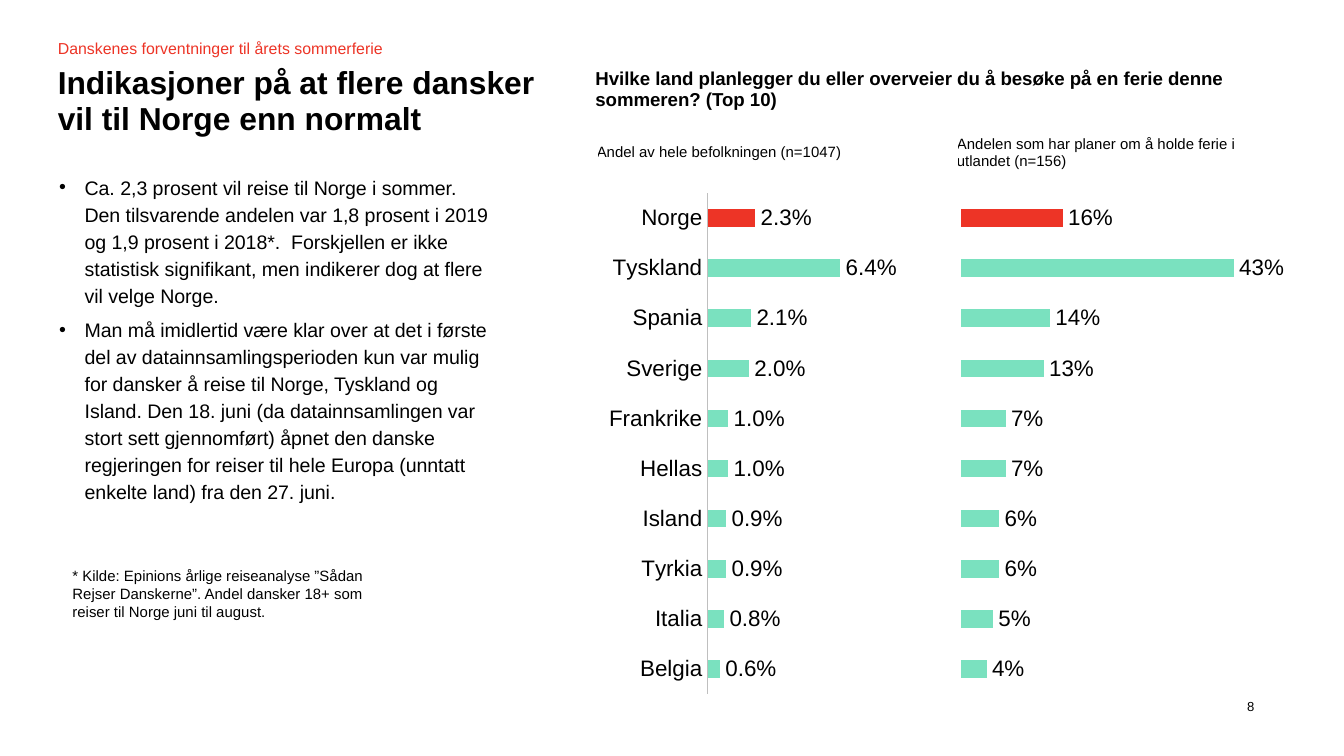
"""Build the slide on Danish summer holiday plans, with two bar charts."""
from dataclasses import dataclass

from lxml import etree
from pptx import Presentation
from pptx.chart.data import CategoryChartData
from pptx.dml.color import RGBColor
from pptx.enum.chart import XL_CHART_TYPE, XL_LABEL_POSITION, XL_TICK_LABEL_POSITION, XL_TICK_MARK
from pptx.enum.text import MSO_ANCHOR
from pptx.oxml import parse_xml
from pptx.oxml.ns import nsdecls, qn
from pptx.util import Inches, Pt

BAR = XL_CHART_TYPE.BAR_CLUSTERED
OUTSIDE_END = XL_LABEL_POSITION.OUTSIDE_END
LABELS_BESIDE = XL_TICK_LABEL_POSITION.NEXT_TO_AXIS
NO_TICK = XL_TICK_MARK.NONE
TOP = MSO_ANCHOR.TOP


@dataclass(frozen=True)
class Theme:
    """Fonts, colours and type sizes."""
    font: str = "Arial"
    ink: str = "000000"
    paper: str = "FFFFFF"
    accent: str = "ED3426"
    bar: str = "7AE1BF"
    axis: str = "BFBFBF"
    grid: str = "D9D9D9"
    number: float = 7
    small: float = 8
    kicker: float = 8.5
    heading: float = 10
    body: float = 10.5
    chart: float = 12
    title: float = 17


THEME = Theme()


@dataclass(frozen=True)
class Area:
    """A rectangle in inches."""
    left: float
    top: float
    width: float
    height: float

    def lengths(self) -> tuple:
        """Return the four sides as lengths."""
        return tuple(Inches(side) for side in (self.left, self.top, self.width, self.height))


@dataclass(frozen=True)
class Text:
    """A block of text in one style."""
    area: Area
    paragraphs: tuple[str, ...]
    size: float
    color: str = THEME.ink
    bold: bool = False
    wrap: bool = True
    bullets: bool = False
    margins: tuple[float, float] = (0, 0)
    line_spacing: float = 1
    fill: str | None = None


@dataclass(frozen=True)
class BarChart:
    """A bar chart whose first bar is highlighted."""
    area: Area
    plot: tuple[float, float, float, float]
    categories: tuple[str, ...]
    values: tuple[float, ...]
    maximum: float
    number_format: str
    show_axis: bool


COUNTRIES = ("Norge", "Tyskland", "Spania", "Sverige", "Frankrike",
             "Hellas", "Island", "Tyrkia", "Italia", "Belgia")

TEXTS = (
    Text(Area(9.28, 5.2, 0.28, 0.12), ("8",), THEME.number),
    Text(Area(0.43, 0.29, 2.45, 0.14), ("Danskenes forventninger til årets sommerferie",),
         THEME.kicker, THEME.accent, wrap=False),
    Text(Area(0.43, 0.49, 3.78, 0.54),
         ("Indikasjoner på at flere dansker vil til Norge enn normalt",),
         THEME.title, bold=True, line_spacing=0.95, fill=THEME.paper),
    Text(Area(0.44, 1.28, 3.23, 1.42), (
        "Ca. 2,3 prosent vil reise til Norge i sommer. Den tilsvarende andelen var 1,8 prosent "
        "i 2019 og 1,9 prosent i 2018*.  Forskjellen er ikke statistisk signifikant, men "
        "indikerer dog at flere vil velge Norge.",
        "Man må imidlertid være klar over at det i første del av datainnsamlingsperioden kun var "
        "mulig for dansker å reise til Norge, Tyskland og Island. Den 18. juni (da "
        "datainnsamlingen var stort sett gjennomført) åpnet den danske regjeringen for reiser "
        "til hele Europa (unntatt enkelte land) fra den 27. juni.",
    ), THEME.body, bullets=True, line_spacing=1.15),
    Text(Area(0.44, 4.17, 2.61, 0.5), (
        "* Kilde: Epinions årlige reiseanalyse ”Sådan Rejser Danskerne”. "
        "Andel dansker 18+ som reiser til Norge juni til august.",
    ), THEME.small, margins=(0.1, 0.05)),
)

HEADINGS = (
    Text(Area(4.43, 0.51, 5.15, 0.41), (
        "Hvilke land planlegger du eller overveier du å besøke på en ferie denne sommeren? "
        "(Top 10)",), THEME.heading, bold=True),
    Text(Area(7.12, 1.01, 2.31, 0.35),
         ("Andelen som har planer om å holde ferie i utlandet (n=156)",), THEME.small),
    Text(Area(4.44, 1.07, 2.31, 0.21), ("Andel av hele befolkningen (n=1047)",), THEME.small),
)

CHARTS = (
    BarChart(Area(3.76, 1.28, 3.89, 4.16), (0.387, 0.038, 0.397, 0.896), COUNTRIES,
             (0.023, 0.064, 0.021, 0.02, 0.01, 0.01, 0.009, 0.009, 0.008, 0.006),
             0.1, "###0.0%", True),
    BarChart(Area(7, 1.28, 2.65, 4.16), (0.058, 0.038, 0.89, 0.896),
             tuple(str(rank) for rank in range(10, 0, -1)),
             (0.16, 0.43, 0.14, 0.13, 0.07, 0.07, 0.06, 0.06, 0.05, 0.04),
             0.5, "###0%", False),
)


def set_font(font, size: float, color: str = THEME.ink, bold: bool = False) -> None:
    """Apply the theme typeface with a size and colour."""
    font.name, font.size, font.bold = THEME.font, Pt(size), bold
    font.color.rgb = RGBColor.from_string(color)


def set_line(line, color: str) -> None:
    """Draw a thin chart line in a colour."""
    line.color.rgb = RGBColor.from_string(color)
    line.width = Pt(0.75)


def write_text(frame, text: Text) -> None:
    """Write and style the paragraphs of a text block."""
    for index, words in enumerate(text.paragraphs):
        para = frame.paragraphs[0] if index == 0 else frame.add_paragraph()
        para.text = words
        para.line_spacing = text.line_spacing
        if text.bullets:
            para.space_before, para.space_after = Pt(2 if index else 0), Pt(2)
            properties = para._p.get_or_add_pPr()
            properties.set("marL", str(Inches(0.19)))
            properties.set("indent", str(Inches(-0.19)))
            etree.SubElement(properties, qn("a:buFont")).set("typeface", THEME.font)
            etree.SubElement(properties, qn("a:buChar")).set("char", "•")
        set_font(para.font, text.size, text.color, text.bold)


def add_text(page, text: Text) -> None:
    """Add a text box."""
    box = page.shapes.add_textbox(*text.area.lengths())
    if text.fill:
        box.fill.solid()
        box.fill.fore_color.rgb = RGBColor.from_string(text.fill)
    frame = box.text_frame
    frame.word_wrap = text.wrap
    frame.margin_left = frame.margin_right = Inches(text.margins[0])
    frame.margin_top = frame.margin_bottom = Inches(text.margins[1])
    write_text(frame, text)


def add_heading(page, text: Text) -> None:
    """Add a one-cell table that holds a chart heading."""
    table = page.shapes.add_table(1, 1, *text.area.lengths()).table
    table.first_row = table.horz_banding = False
    cell = table.cell(0, 0)
    cell.margin_left = cell.margin_top = cell.margin_right = 0
    cell.margin_bottom = Inches(0.08)
    cell.vertical_anchor = TOP
    write_text(cell.text_frame, text)
    properties = cell._tc.get_or_add_tcPr()
    for side in ("lnL", "lnR", "lnT", "lnB"):
        properties.append(parse_xml(
            f'<a:{side} {nsdecls("a")} w="{Pt(1)}"><a:solidFill>'
            f'<a:srgbClr val="{THEME.paper}"/></a:solidFill></a:{side}>'))
    cell.fill.background()


def place_plot(chart, plot: tuple[float, float, float, float]) -> None:
    """Fix the inner plot area as fractions of the chart."""
    sides = "".join(f'<c:{name}Mode val="edge"/>' for name in "xy")
    sides += "".join(f'<c:{name} val="{share}"/>' for name, share in zip("xywh", plot))
    area = chart.element.find(".//" + qn("c:plotArea"))
    for layout in area.findall(qn("c:layout")):
        area.remove(layout)
    area.insert(0, parse_xml(
        f'<c:layout {nsdecls("c")}><c:manualLayout><c:layoutTarget val="inner"/>'
        f'{sides}</c:manualLayout></c:layout>'))


def add_bars(page, bars: BarChart) -> None:
    """Add a bar chart with the first country on top."""
    data = CategoryChartData(number_format=bars.number_format)
    data.categories = bars.categories[::-1]
    data.add_series("Series 1", bars.values[::-1])
    chart = page.shapes.add_chart(BAR, *bars.area.lengths(), data).chart
    chart.has_legend = chart.has_title = False
    set_font(chart.font, THEME.heading)

    countries, shares = chart.category_axis, chart.value_axis
    countries.visible = bars.show_axis
    countries.major_tick_mark = countries.minor_tick_mark = NO_TICK
    countries.tick_label_position = LABELS_BESIDE
    set_line(countries.format.line, THEME.axis)
    set_font(countries.tick_labels.font, THEME.chart)
    shares.visible, shares.has_major_gridlines = False, bars.show_axis
    if bars.show_axis:
        set_line(shares.major_gridlines.format.line, THEME.grid)
    shares.major_tick_mark = shares.minor_tick_mark = NO_TICK
    shares.minimum_scale, shares.maximum_scale, shares.major_unit = 0, bars.maximum, 0.2

    plot = chart.plots[0]
    plot.gap_width, plot.vary_by_categories = 182, False
    series = plot.series[0]
    series.invert_if_negative = False
    highlight = series.points[len(bars.values) - 1]
    for target, color in ((series, THEME.bar), (highlight, THEME.accent)):
        target.format.fill.solid()
        target.format.fill.fore_color.rgb = RGBColor.from_string(color)
    labels = series.data_labels
    labels.show_value, labels.position = True, OUTSIDE_END
    labels.number_format, labels.number_format_is_linked = bars.number_format, False
    set_font(labels.font, THEME.chart)
    place_plot(chart, bars.plot)


def main() -> None:
    """Build and save the deck."""
    deck = Presentation()
    deck.slide_width = Inches(10)
    deck.slide_height = deck.slide_width * 9 // 16
    page = deck.slides.add_slide(deck.slide_layouts[6])
    for items, draw in ((TEXTS, add_text), (CHARTS, add_bars), (HEADINGS, add_heading)):
        for item in items:
            draw(page, item)
    deck.save("out.pptx")


if __name__ == "__main__":
    main()
